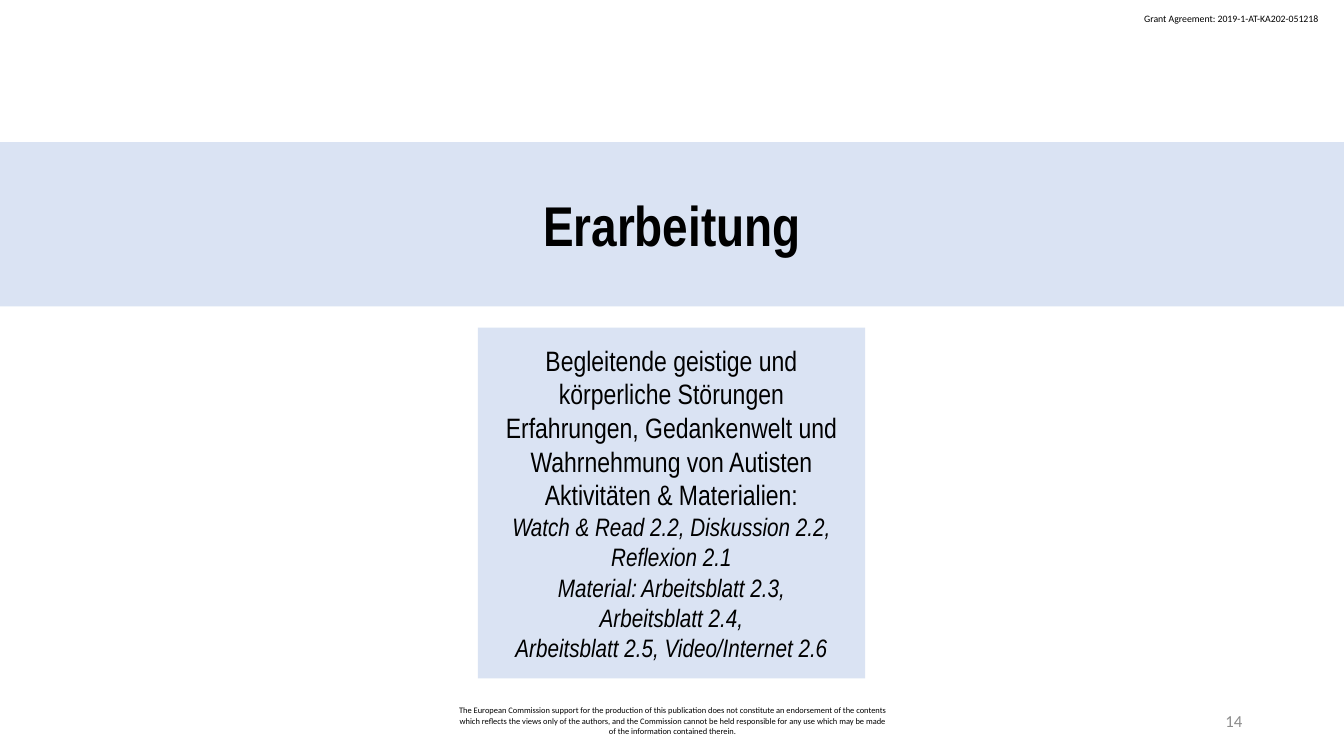
from dataclasses import dataclass

from pptx import Presentation
from pptx.dml.color import RGBColor
from pptx.enum.shapes import MSO_SHAPE
from pptx.enum.text import MSO_ANCHOR, PP_ALIGN
from pptx.util import Inches, Pt

BLACK, GREY, PALE_BLUE = "000000", "8C8C8C", "DAE3F3"


@dataclass
class Line:
    text: str
    size: float
    font: str = "Calibri"
    color: str = BLACK
    bold: bool = False
    italic: bool = False


@dataclass
class Block:
    left: float
    top: float
    width: float
    height: float
    lines: list[Line]
    align: PP_ALIGN = PP_ALIGN.CENTER
    anchor: MSO_ANCHOR = MSO_ANCHOR.MIDDLE
    fill: str = ""
    wrap: bool = True


def rgb(value: str) -> RGBColor:
    return RGBColor.from_string(value)


def draw_block(slide, block: Block) -> None:
    place = [Inches(v) for v in (block.left, block.top, block.width, block.height)]
    if block.fill:
        shape = slide.shapes.add_shape(MSO_SHAPE.RECTANGLE, *place)
        shape.shadow.inherit = False
        shape.fill.solid()
        shape.fill.fore_color.rgb = rgb(block.fill)
        shape.line.fill.background()
    else:
        shape = slide.shapes.add_textbox(*place)

    frame = shape.text_frame
    frame.word_wrap = block.wrap
    frame.vertical_anchor = block.anchor
    if block.fill:
        frame.margin_left = frame.margin_right = Inches(0.13)
        frame.margin_top = frame.margin_bottom = Inches(0.07)

    for index, line in enumerate(block.lines):
        paragraph = frame.add_paragraph() if index else frame.paragraphs[0]
        paragraph.text = line.text
        paragraph.alignment = block.align
        font = paragraph.font
        font.name, font.size = line.font, Pt(line.size)
        font.bold, font.italic = line.bold, line.italic
        font.color.rgb = rgb(line.color)


# Content of the section
topics = [
    "Begleitende geistige und körperliche Störungen",
    "Erfahrungen, Gedankenwelt und Wahrnehmung von Autisten",
    "Aktivitäten & Materialien:",
]
materials = [
    "Watch & Read 2.2, Diskussion 2.2, Reflexion 2.1",
    "Material: Arbeitsblatt 2.3,",
    "Arbeitsblatt 2.4,",
    "Arbeitsblatt 2.5, Video/Internet 2.6",
]
disclaimer = (
    "The European Commission support for the production of this publication "
    "does not constitute an endorsement of the contents which reflects the "
    "views only of the authors, and the Commission cannot be held responsible "
    "for any use which may be made of the information contained therein."
)

BLOCKS = [
    # Header and footer
    Block(11.25, 0.08, 1.97, 0.22,
          [Line("Grant Agreement: 2019-1-AT-KA202-051218", 7)],
          align=PP_ALIGN.LEFT, anchor=MSO_ANCHOR.TOP, wrap=False),
    Block(4.42, 6.95, 4.5, 0.4, [Line(disclaimer, 6)]),
    Block(9.42, 6.95, 3, 0.4, [Line("14", 12, color=GREY)], align=PP_ALIGN.RIGHT),
    # Title band
    Block(0, 1.41, 13.33, 1.63,
          [Line("Erarbeitung", 40, "Arial Narrow", bold=True)], fill=PALE_BLUE),
    # Topics and materials
    Block(4.74, 3.25, 3.84, 3.48,
          [Line(text, 20, "Arial Narrow") for text in topics]
          + [Line(text, 18, "Arial Narrow", italic=True) for text in materials],
          fill=PALE_BLUE),
]


def main() -> None:
    deck = Presentation()
    deck.slide_width, deck.slide_height = Inches(13.33), Inches(7.5)
    slide = deck.slides.add_slide(deck.slide_layouts[6])
    for block in BLOCKS:
        draw_block(slide, block)
    deck.save("out.pptx")


if __name__ == "__main__":
    main()
